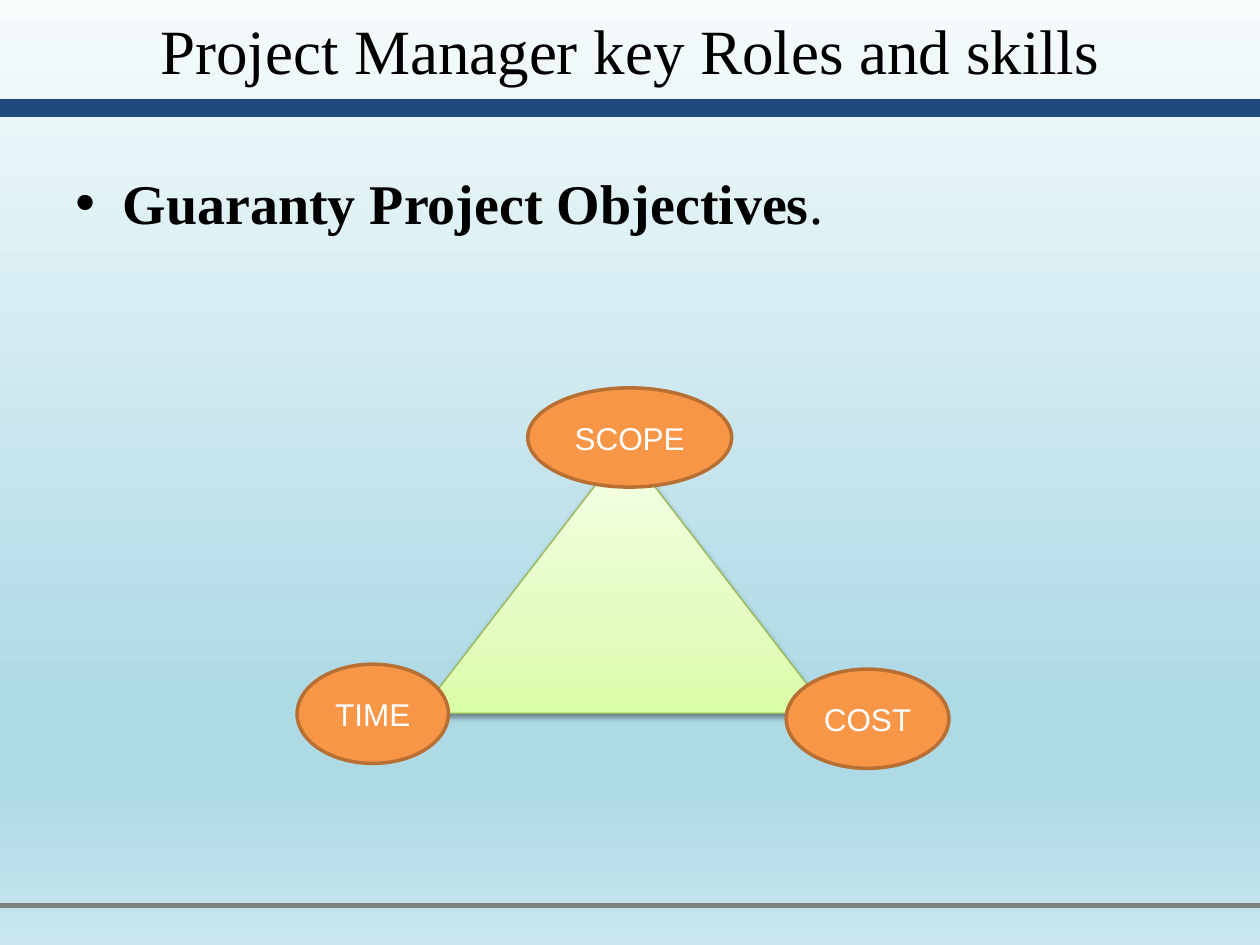
import pptx
import pptx.util
import pptx.dml.color
import pptx.enum.shapes
import pptx.enum.text
import pptx.oxml
import pptx.oxml.ns
import lxml.etree

Cm = pptx.util.Cm
Pt = pptx.util.Pt
SHAPE = pptx.enum.shapes.MSO_SHAPE
CENTER = pptx.enum.text.PP_ALIGN.CENTER
MIDDLE = pptx.enum.text.MSO_ANCHOR.MIDDLE
qn = pptx.oxml.ns.qn


def color(hex_code):
    return pptx.dml.color.RGBColor.from_string(hex_code)


def set_gradient(fill, owner, stops, angle):
    fill.gradient()
    fill.gradient_angle = angle
    stop_list = owner.find(".//" + qn("a:gsLst"))
    for old_stop in list(stop_list):
        stop_list.remove(old_stop)
    for percent, hex_code in stops:
        stop = lxml.etree.SubElement(stop_list, qn("a:gs"), pos=str(percent * 1000))
        lxml.etree.SubElement(stop, qn("a:srgbClr"), val=hex_code)


presentation = pptx.Presentation()
presentation.slide_width = Cm(25.4)
presentation.slide_height = Cm(19.05)
slide = presentation.slides.add_slide(presentation.slide_layouts[5])
set_gradient(slide.background.fill, slide._element,
             [(0, "F6FBFC"), (74, "AEDAE5"), (83, "AEDAE5"), (100, "C9E6EE")], 270)

for y, hex_code, width in [(2.18, "1F497D", 10), (18.26, "808080", 3)]:
    rule = slide.shapes.add_connector(pptx.enum.shapes.MSO_CONNECTOR.STRAIGHT,
                                      0, Cm(y), Cm(25.4), Cm(y))
    rule.line.color.rgb = color(hex_code)
    rule.line.width = Pt(width)
    lxml.etree.SubElement(rule._element.spPr, qn("a:effectLst"))

title = slide.shapes.title
title.left, title.top, title.width, title.height = 0, 0, Cm(25.4), Cm(2)
title.text_frame.text = "Project Manager key Roles and skills"
title.text_frame.vertical_anchor = MIDDLE
heading = title.text_frame.paragraphs[0]
heading.alignment = CENTER
heading.runs[0].font.name = "Times New Roman"
heading.runs[0].font.size = Pt(36)
heading.runs[0].font.color.rgb = color("000000")

objectives = slide.shapes.add_textbox(Cm(1.27), Cm(3.28), Cm(23.72), Cm(14.57))
objectives.text_frame.word_wrap = True
objective = objectives.text_frame.paragraphs[0]
bullet_properties = objective._p.get_or_add_pPr()
bullet_properties.set("marL", str(Cm(0.95)))
bullet_properties.set("indent", str(Cm(-0.95)))
lxml.etree.SubElement(bullet_properties, qn("a:buFont"), typeface="Arial")
lxml.etree.SubElement(bullet_properties, qn("a:buChar"), char="•")
for words, bold in [("Guaranty Project Objectives", True), (".", False)]:
    run = objective.add_run()
    run.text = words
    run.font.name = "Times New Roman"
    run.font.size = Pt(32)
    run.font.bold = bold
    run.font.color.rgb = color("000000")

triangle = slide.shapes.add_shape(SHAPE.ISOSCELES_TRIANGLE,
                                  Cm(8.46), Cm(9.02), Cm(8.26), Cm(5.36))
set_gradient(triangle.fill, triangle._element,
             [(0, "DAFDA7"), (35, "E4FCC2"), (100, "F5FFE7")], 90)
triangle.line.color.rgb = color("98B955")
triangle.line.width = Pt(0.75)
triangle.shadow.inherit = False
triangle._element.spPr.find(qn("a:effectLst")).append(pptx.oxml.parse_xml(
    '<a:outerShdw xmlns:a="http://schemas.openxmlformats.org/drawingml/2006/main" '
    'blurRad="40000" dist="20000" dir="5400000" rotWithShape="0">'
    '<a:srgbClr val="000000"><a:alpha val="38000"/></a:srgbClr></a:outerShdw>'))

constraints = [
    ("SCOPE", 10.64, 7.82, 4.11),
    ("COST", 15.85, 13.49, 3.28),
    ("TIME", 5.99, 13.39, 3.05),
]
for name, left, top, width in constraints:
    constraint = slide.shapes.add_shape(SHAPE.OVAL, Cm(left), Cm(top), Cm(width), Cm(2))
    constraint.shadow.inherit = False
    constraint.fill.solid()
    constraint.fill.fore_color.rgb = color("F79646")
    constraint.line.color.rgb = color("B76F34")
    constraint.line.width = Pt(2)
    frame = constraint.text_frame
    frame.text = name
    frame.margin_left = frame.margin_right = 0
    frame.vertical_anchor = MIDDLE
    label = frame.paragraphs[0]
    label.alignment = CENTER
    label.runs[0].font.name = "Arial"
    label.runs[0].font.size = Pt(18)
    label.runs[0].font.color.rgb = color("FFFFFF")

presentation.save("out.pptx")
